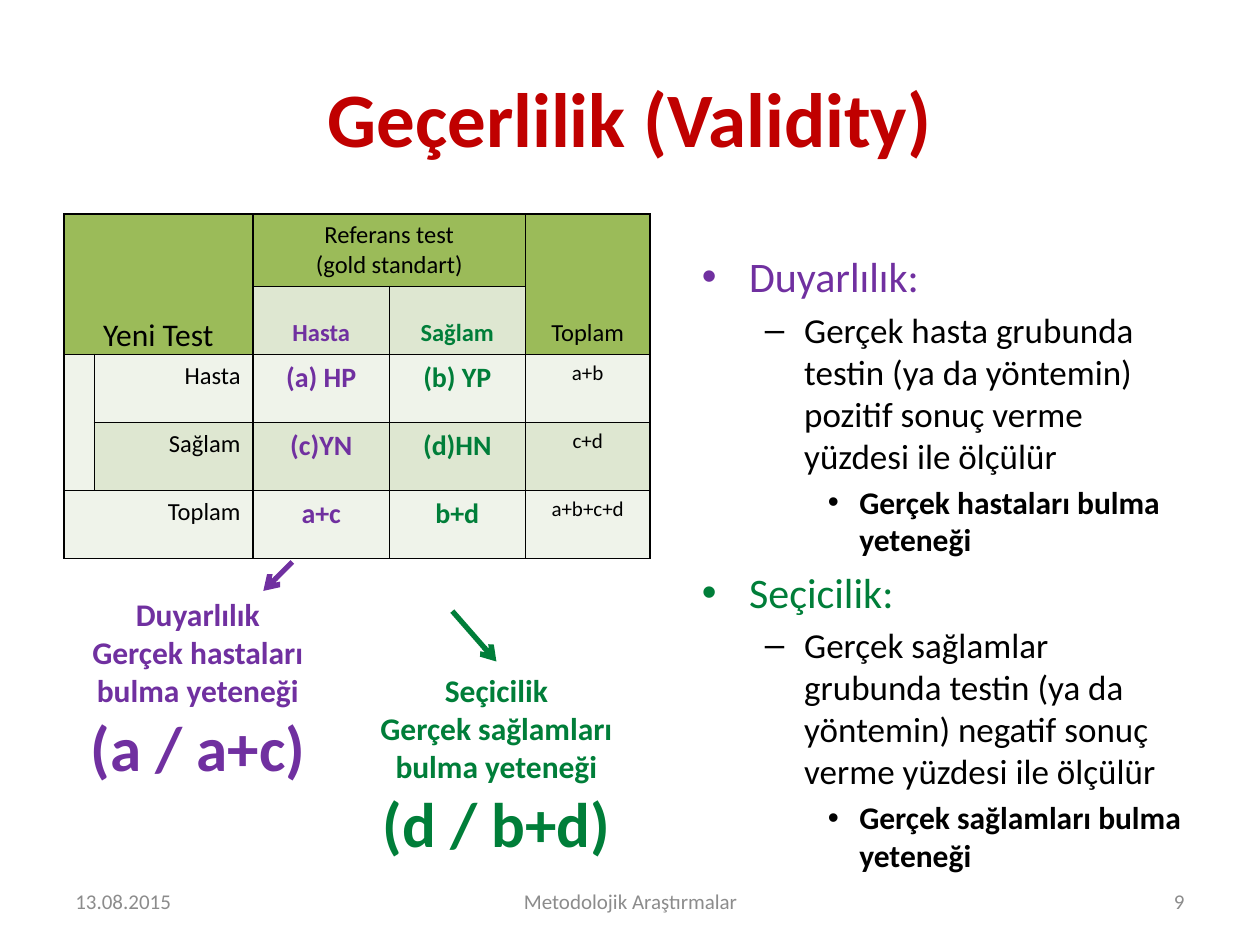
from lxml.etree import SubElement
from pptx import Presentation
from pptx.dml.color import RGBColor
from pptx.enum.shapes import MSO_CONNECTOR
from pptx.enum.text import MSO_ANCHOR, MSO_AUTO_SIZE, PP_ALIGN
from pptx.oxml.ns import qn
from pptx.util import Inches, Pt

COLORS = {
    "red": "C00000", "purple": "7030A0", "green": "007E39", "black": "000000",
    "gray": "8C8C8C", "header": "9BBB59", "band": "DEE7D1", "light": "EFF3EA",
}
LEFT, CENTER, RIGHT = PP_ALIGN.LEFT, PP_ALIGN.CENTER, PP_ALIGN.RIGHT
TOP, MIDDLE, BOTTOM = MSO_ANCHOR.TOP, MSO_ANCHOR.MIDDLE, MSO_ANCHOR.BOTTOM


def write(frame, text, size=18, color="black", bold=False, align=None, first=True):
    """Write each line of text as a paragraph and return the last one."""
    for line in text.split("\n"):
        paragraph = frame.paragraphs[0] if first else frame.add_paragraph()
        if first:
            paragraph.space_before = Pt(0)
        first = False
        paragraph.text = line
        paragraph.alignment = align
        font = paragraph.runs[0].font
        font.name, font.size, font.bold = "Calibri", Pt(size), bold
        font.color.rgb = RGBColor.from_string(COLORS[color])
    return paragraph


def add_frame(left, top, width, height, anchor=MIDDLE, wrap=True):
    box = slide.shapes.add_textbox(Inches(left), Inches(top), Inches(width), Inches(height))
    box.text_frame.word_wrap = wrap
    box.text_frame.vertical_anchor = anchor
    return box.text_frame


prs = Presentation()
prs.slide_width, prs.slide_height = Inches(10), Inches(7.5)
slide = prs.slides.add_slide(prs.slide_layouts[1])

# Title
title = slide.shapes.title
title.left, title.top, title.width, title.height = (Inches(v) for v in (0.5, 0.3, 9, 1.25))
title.text_frame.vertical_anchor = MIDDLE
write(title.text_frame, "Geçerlilik (Validity)", size=44, color="red", bold=True, align=CENTER)

# Definitions
definitions = slide.placeholders[1]
definitions.left, definitions.top, definitions.width, definitions.height = (
    Inches(v) for v in (5.47, 1.94, 4.03, 4.76))
definitions.text_frame.auto_size = MSO_AUTO_SIZE.NONE
outline = [
    (0, "Duyarlılık:", "purple"),
    (1, "Gerçek hasta grubunda testin (ya da yöntemin) pozitif sonuç verme yüzdesi ile ölçülür", "black"),
    (2, "Gerçek hastaları bulma yeteneği", "black"),
    (0, "Seçicilik:", "green"),
    (1, "Gerçek sağlamlar grubunda testin (ya da yöntemin) negatif sonuç verme yüzdesi ile ölçülür", "black"),
    (2, "Gerçek sağlamları bulma yeteneği", "black"),
]
for index, (level, text, color) in enumerate(outline):
    paragraph = write(definitions.text_frame, text, size=(24, 20, 18)[level], color=color,
                      bold=level == 2, first=index == 0)
    paragraph.level = level

# Table of test results against the reference test
column_widths = [0.24, 1.26, 1.08, 1.08, 0.99]
results = slide.shapes.add_table(5, 5, Inches(0.51), Inches(1.7), Inches(4.65), Inches(2.7)).table
for column, width in zip(results.columns, column_widths):
    column.width = Inches(width)
for row in results.rows:
    row.height = Inches(0.54)

row_fills = ["header", "band", "light", "band", "light"]
for r, row_fill in enumerate(row_fills):
    for c in range(5):
        cell = results.cell(r, c)
        properties = cell._tc.get_or_add_tcPr()
        for side in ("lnL", "lnR", "lnT", "lnB"):
            border = SubElement(properties, qn(f"a:{side}"), w=str(Pt(1)))
            SubElement(SubElement(border, qn("a:solidFill")), qn("a:srgbClr"), val=COLORS["black"])
        cell.fill.solid()
        fill = "light" if c == 0 and r > 1 else row_fill
        cell.fill.fore_color.rgb = RGBColor.from_string(COLORS[fill])

for start, end in [((0, 0), (1, 1)), ((0, 2), (0, 3)), ((0, 4), (1, 4)),
                   ((2, 0), (3, 0)), ((4, 0), (4, 1))]:
    results.cell(*start).merge(results.cell(*end))

headers = [
    (0, 2, "Referans test\n(gold standart)", "black", TOP),
    (0, 4, "Toplam", "black", BOTTOM),
    (1, 2, "Hasta", "purple", BOTTOM),
    (1, 3, "Sağlam", "green", BOTTOM),
]
for r, c, text, color, anchor in headers:
    cell = results.cell(r, c)
    cell.vertical_anchor = anchor
    write(cell.text_frame, text, size=14, color=color, bold=r == 1, align=CENTER)

column_formats = [
    dict(size=14, align=RIGHT),
    dict(size=16, color="purple", bold=True, align=CENTER),
    dict(size=16, color="green", bold=True, align=CENTER),
    dict(size=12, align=CENTER),
]
counts = [
    ("Hasta", "(a) HP", "(b) YP", "a+b"),
    ("Sağlam", "(c)YN", "(d)HN", "c+d"),
    ("Toplam", "a+c", "b+d", "a+b+c+d"),
]
for r, row in enumerate(counts, start=2):
    for c, (text, text_format) in enumerate(zip(row, column_formats), start=1):
        label_column = 0 if r == 4 and c == 1 else c
        write(results.cell(r, label_column).text_frame, text, **text_format)

# Footer
for left, width, text, align in [(0.5, 2.33, "13.08.2015", LEFT),
                                 (3.42, 3.17, "Metodolojik Araştırmalar", CENTER),
                                 (7.17, 2.33, "9", RIGHT)]:
    write(add_frame(left, 6.95, width, 0.4), text, size=12, color="gray", align=align)

# Formulas, each with an arrow from the table
formulas = [
    ("purple", (2.32, 4.46, 2.09, 4.69), (0.43, 4.77, 2.28, 1.41),
     "Duyarlılık\nGerçek hastaları bulma yeteneği", "(a / a+c)"),
    ("green", (3.59, 4.85, 3.94, 5.25), (2.8, 5.25, 2.28, 1.65),
     "Seçicilik\nGerçek sağlamları bulma yeteneği", "(d / b+d)"),
]
for color, ends, place, meaning, formula in formulas:
    arrow = slide.shapes.add_connector(MSO_CONNECTOR.STRAIGHT, *(Inches(v) for v in ends))
    arrow.line.color.rgb = RGBColor.from_string(COLORS[color])
    arrow.line.width = Pt(3)
    SubElement(arrow.line._get_or_add_ln(), qn("a:tailEnd"), type="arrow")
    SubElement(arrow._element.spPr, qn("a:effectLst"))
    frame = add_frame(*place)
    write(frame, meaning, color=color, bold=True, align=CENTER)
    write(frame, formula, size=36, color=color, bold=True, align=CENTER, first=False)

# Row heading over the merged corner cell
write(add_frame(0.72, 2.45, 1.09, 0.4, anchor=TOP, wrap=False), "Yeni Test")

prs.save("out.pptx")
